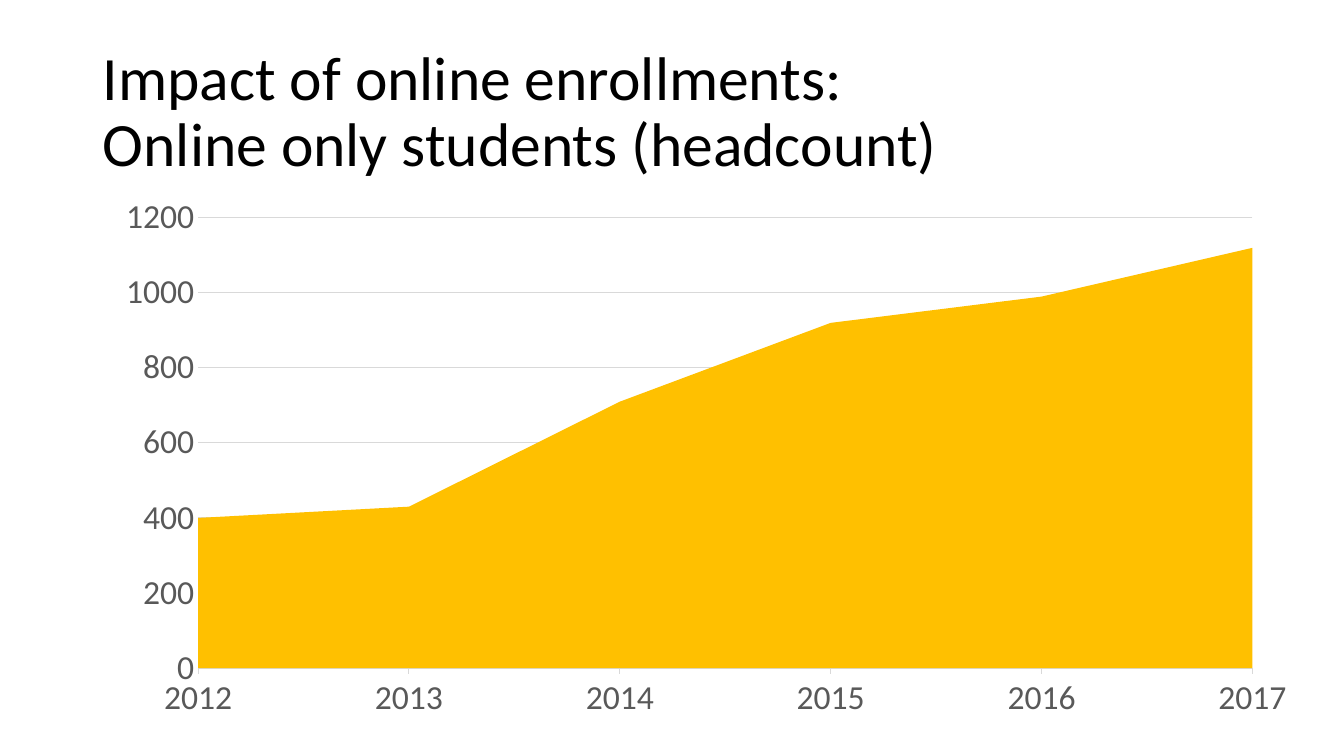
import pptx
import pptx.chart.data
import pptx.dml.color
import pptx.enum.chart
import pptx.enum.text
import pptx.util

Inches = pptx.util.Inches
Pt = pptx.util.Pt
RGBColor = pptx.dml.color.RGBColor
TickMark = pptx.enum.chart.XL_TICK_MARK

TITLE = "Impact of online enrollments:\vOnline only students (headcount)"
HEADCOUNTS = {
    "2012": 400,
    "2013": 430,
    "2014": 710,
    "2015": 920,
    "2016": 990,
    "2017": 1120,
}
TITLE_BOX = (0.92, 0.4, 12.08, 1.45)
CHART_BOX = (1.01, 1.85, 11.99, 5.39)
FONT = "Calibri"
BLACK = RGBColor(0x00, 0x00, 0x00)
GRAY = RGBColor(0x59, 0x59, 0x59)
LIGHT_GRAY = RGBColor(0xD9, 0xD9, 0xD9)
GOLD = RGBColor(0xFF, 0xC0, 0x00)


def style_font(font, size, color):
    font.name = FONT
    font.size = Pt(size)
    font.color.rgb = color


def style_line(line):
    line.color.rgb = LIGHT_GRAY
    line.width = Pt(0.75)


def add_title(slide):
    title = slide.shapes.title
    title.left, title.top, title.width, title.height = map(Inches, TITLE_BOX)
    frame = title.text_frame
    frame.text = TITLE
    frame.word_wrap = True
    frame.auto_size = pptx.enum.text.MSO_AUTO_SIZE.NONE
    frame.vertical_anchor = pptx.enum.text.MSO_ANCHOR.MIDDLE
    paragraph = frame.paragraphs[0]
    paragraph.alignment = pptx.enum.text.PP_ALIGN.LEFT
    paragraph.line_spacing = 0.9
    for run in paragraph.runs:
        style_font(run.font, 44, BLACK)


def add_headcount_chart(slide):
    data = pptx.chart.data.CategoryChartData(number_format="0")
    data.categories = list(HEADCOUNTS)
    data.add_series("Series 1", list(HEADCOUNTS.values()))
    chart = slide.shapes.add_chart(
        pptx.enum.chart.XL_CHART_TYPE.AREA_STACKED, *map(Inches, CHART_BOX), data
    ).chart
    chart.has_title = False
    chart.has_legend = False
    style_font(chart.font, 24, BLACK)

    plot = chart.plots[0]
    plot.vary_by_categories = False
    fill = plot.series[0].format.fill
    fill.solid()
    fill.fore_color.rgb = GOLD

    years, counts = chart.category_axis, chart.value_axis
    for axis in (years, counts):
        style_font(axis.tick_labels.font, 24, GRAY)
        axis.minor_tick_mark = TickMark.NONE
    years.has_major_gridlines = False
    years.major_tick_mark = TickMark.OUTSIDE
    style_line(years.format.line)

    counts.minimum_scale, counts.maximum_scale, counts.major_unit = 0, 1200, 200
    counts.major_tick_mark = TickMark.NONE
    counts.tick_labels.number_format = "0"
    counts.tick_labels.number_format_is_linked = False
    counts.format.line.fill.background()
    counts.has_major_gridlines = True
    style_line(counts.major_gridlines.format.line)


def main():
    presentation = pptx.Presentation()
    presentation.slide_width = Inches(13.33)
    presentation.slide_height = Inches(7.5)
    slide = presentation.slides.add_slide(presentation.slide_layouts[5])
    add_title(slide)
    add_headcount_chart(slide)
    presentation.save("out.pptx")


if __name__ == "__main__":
    main()
